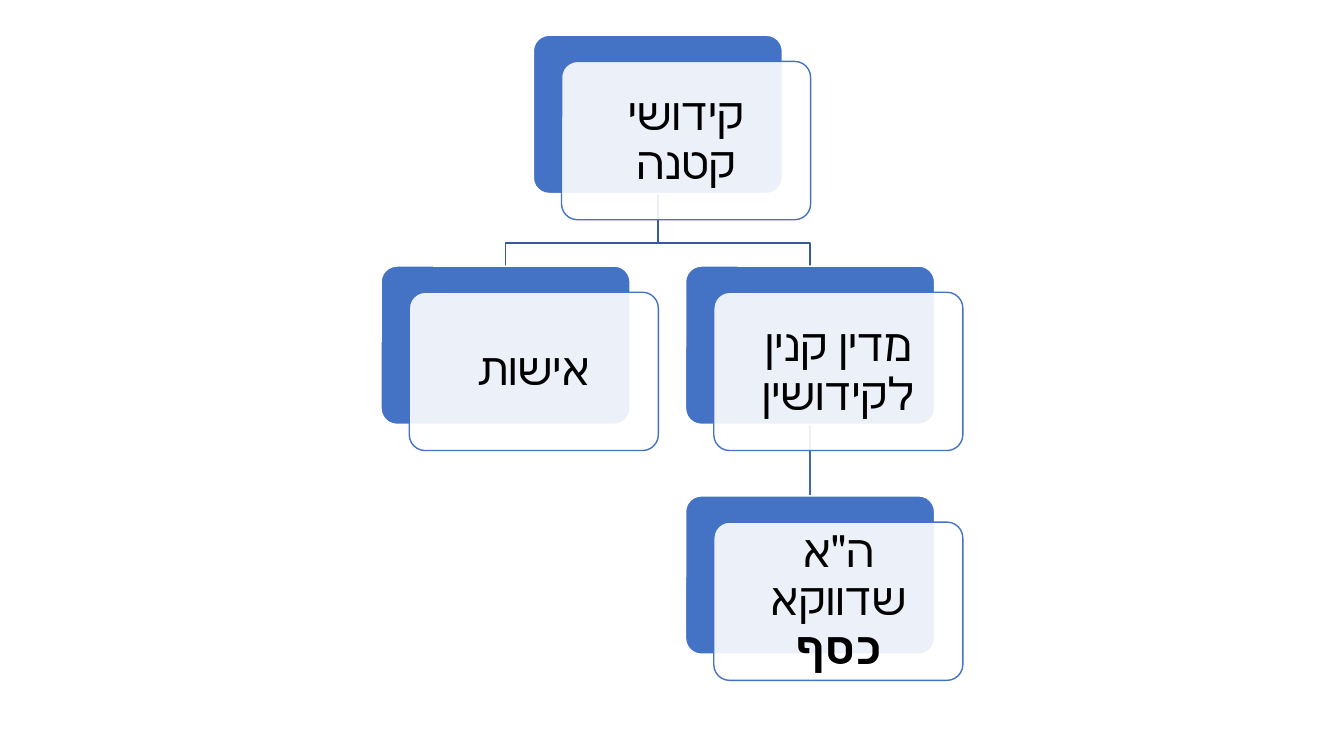
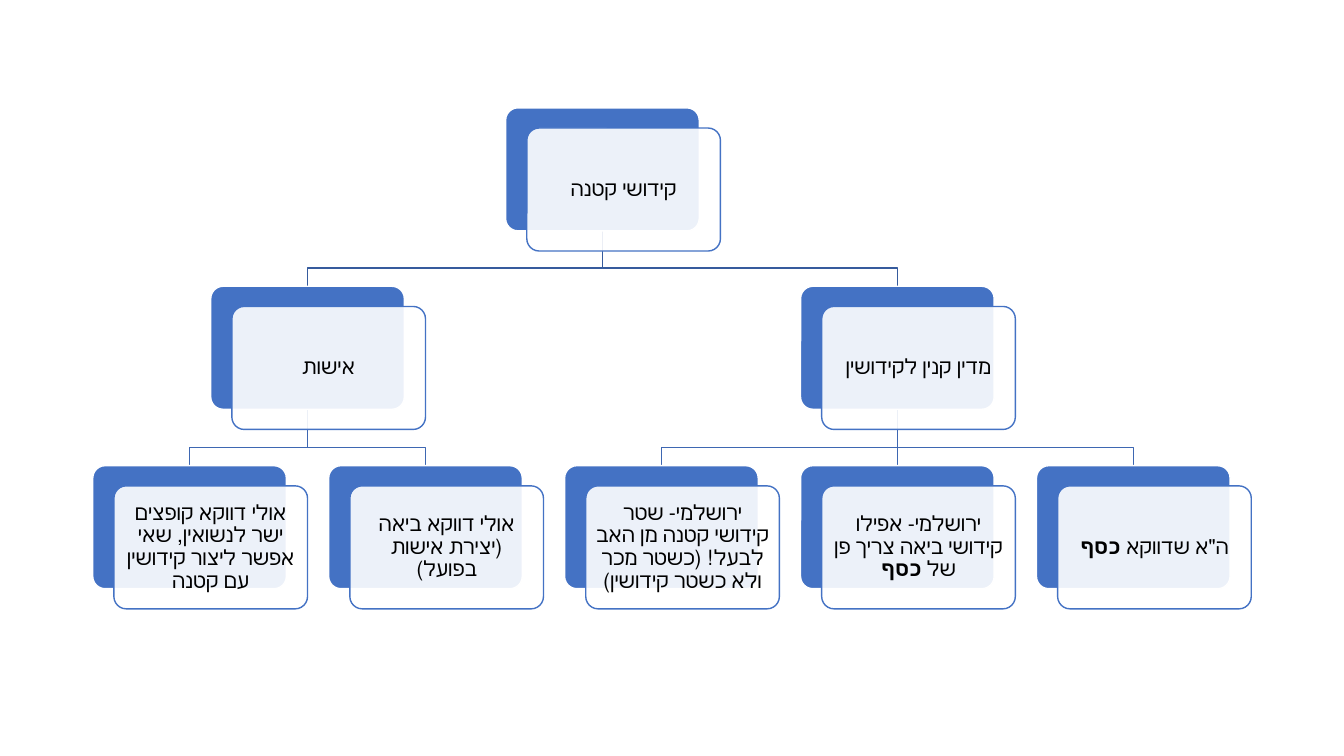
"""Build two slides of Hebrew hierarchy charts with layered cards."""
from lxml.etree import SubElement
from pptx import Presentation
from pptx.dml.color import RGBColor
from pptx.enum.shapes import MSO_CONNECTOR, MSO_SHAPE
from pptx.enum.text import MSO_ANCHOR, PP_ALIGN
from pptx.oxml.ns import qn
from pptx.util import Pt

PX = 9144
FONT = "Calibri"
HEBREW_FONT = "+mn-cs"
COLORS = {"card": "4472C4", "paper": "FFFFFF", "text": "000000"}
LINE_COLORS = {1: "365B9D", 2: "3E67B2"}

CHARTS = [
    {
        "left": 378, "pitch": 302, "tops": (35, 264, 492),
        "card": (247, 157), "offset": (28, 26), "drop": 23,
        "inset": 13, "size": 32,
        "nodes": {
            "root": (0.5, 0, None, ["קידושי קטנה"]),
            "acquisition": (1, 1, "root", ["מדין קנין לקידושין"]),
            "silver": (1, 2, "acquisition", ['ה"א שדווקא ', "כסף"]),
            "marriage": (0, 1, "root", ["אישות"]),
        },
    },
    {
        "left": 92, "pitch": 234, "tops": (107, 284, 462),
        "card": (192, 122), "offset": (21, 20), "drop": 18,
        "inset": 6, "size": 15,
        "nodes": {
            "root": (1.75, 0, None, ["קידושי קטנה"]),
            "acquisition": (3, 1, "root", ["מדין קנין לקידושין"]),
            "silver": (4, 2, "acquisition", ['ה"א שדווקא ', "כסף"]),
            "intimacy": (3, 2, "acquisition",
                         ["ירושלמי- אפילו קידושי ביאה צריך פן של ", "כסף"]),
            "deed": (2, 2, "acquisition",
                     ["ירושלמי- שטר קידושי קטנה מן האב לבעל! "
                      "(כשטר מכר ולא כשטר קידושין)"]),
            "marriage": (0.5, 1, "root", ["אישות"]),
            "union": (1, 2, "marriage",
                      ["אולי דווקא ביאה (יצירת אישות בפועל)"]),
            "wedding": (0, 2, "marriage",
                        ["אולי דווקא קופצים ישר לנשואין, "
                         "שאי אפשר ליצור קידושין עם קטנה"]),
        },
    },
]


def style_line(shape, color):
    shape.line.color.rgb = RGBColor.from_string(color)
    shape.line.width = Pt(1)


def add_card(page, left, top, width, height, fill, line):
    card = page.shapes.add_shape(MSO_SHAPE.ROUNDED_RECTANGLE,
                                 left, top, width, height)
    card.adjustments[0] = 0.1
    card.shadow.inherit = False
    card.fill.solid()
    card.fill.fore_color.rgb = RGBColor.from_string(fill)
    style_line(card, line)
    return card


deck = Presentation()
deck.slide_width = 1333 * PX
deck.slide_height = 750 * PX

for chart in CHARTS:
    page = deck.slides.add_slide(deck.slide_layouts[6])
    width, height = (length * PX for length in chart["card"])
    shift_x, shift_y = (length * PX for length in chart["offset"])
    nodes = chart["nodes"]
    corners = {
        name: (round((chart["left"] + slot * chart["pitch"]) * PX),
               chart["tops"][row] * PX)
        for name, (slot, row, parent, runs) in nodes.items()
    }

    for name, (slot, row, parent, runs) in nodes.items():
        if parent is None:
            continue
        start_x, start_y = corners[parent][0] + width // 2, corners[parent][1] + height
        end_x, end_y = corners[name][0] + width // 2, corners[name][1]
        if start_x == end_x:
            link = page.shapes.add_connector(MSO_CONNECTOR.STRAIGHT,
                                             start_x, start_y, end_x, end_y)
            SubElement(link._element.spPr, qn("a:effectLst"))
        else:
            bend_y = end_y - chart["drop"] * PX
            outline = page.shapes.build_freeform(start_x, start_y)
            outline.add_line_segments(
                [(start_x, bend_y), (end_x, bend_y), (end_x, end_y)], close=False)
            link = outline.convert_to_shape()
            link.fill.background()
            link.shadow.inherit = False
        style_line(link, LINE_COLORS[row])

    for name, (slot, row, parent, runs) in nodes.items():
        left, top = corners[name]
        add_card(page, left, top, width, height, COLORS["card"], COLORS["paper"])
        front = add_card(page, left + shift_x, top + shift_y, width, height,
                         COLORS["paper"], COLORS["card"])
        tint = front._element.spPr.find(qn("a:solidFill")).find(qn("a:srgbClr"))
        SubElement(tint, qn("a:alpha"), val="90000")

        frame = front.text_frame
        frame.word_wrap = True
        frame.vertical_anchor = MSO_ANCHOR.MIDDLE
        frame.margin_left = frame.margin_right = chart["inset"] * PX
        frame.margin_top = frame.margin_bottom = chart["inset"] * PX
        para = frame.paragraphs[0]
        para.alignment = PP_ALIGN.CENTER
        para.line_spacing = 0.9
        para._p.get_or_add_pPr().set("rtl", "1")
        for index, text in enumerate(runs):
            span = para.add_run()
            span.text = text
            span.font.name = FONT
            span.font.size = Pt(chart["size"])
            span.font.bold = index > 0
            span.font.color.rgb = RGBColor.from_string(COLORS["text"])
            SubElement(span._r.get_or_add_rPr(), qn("a:cs"), typeface=HEBREW_FONT)

deck.save("out.pptx")
